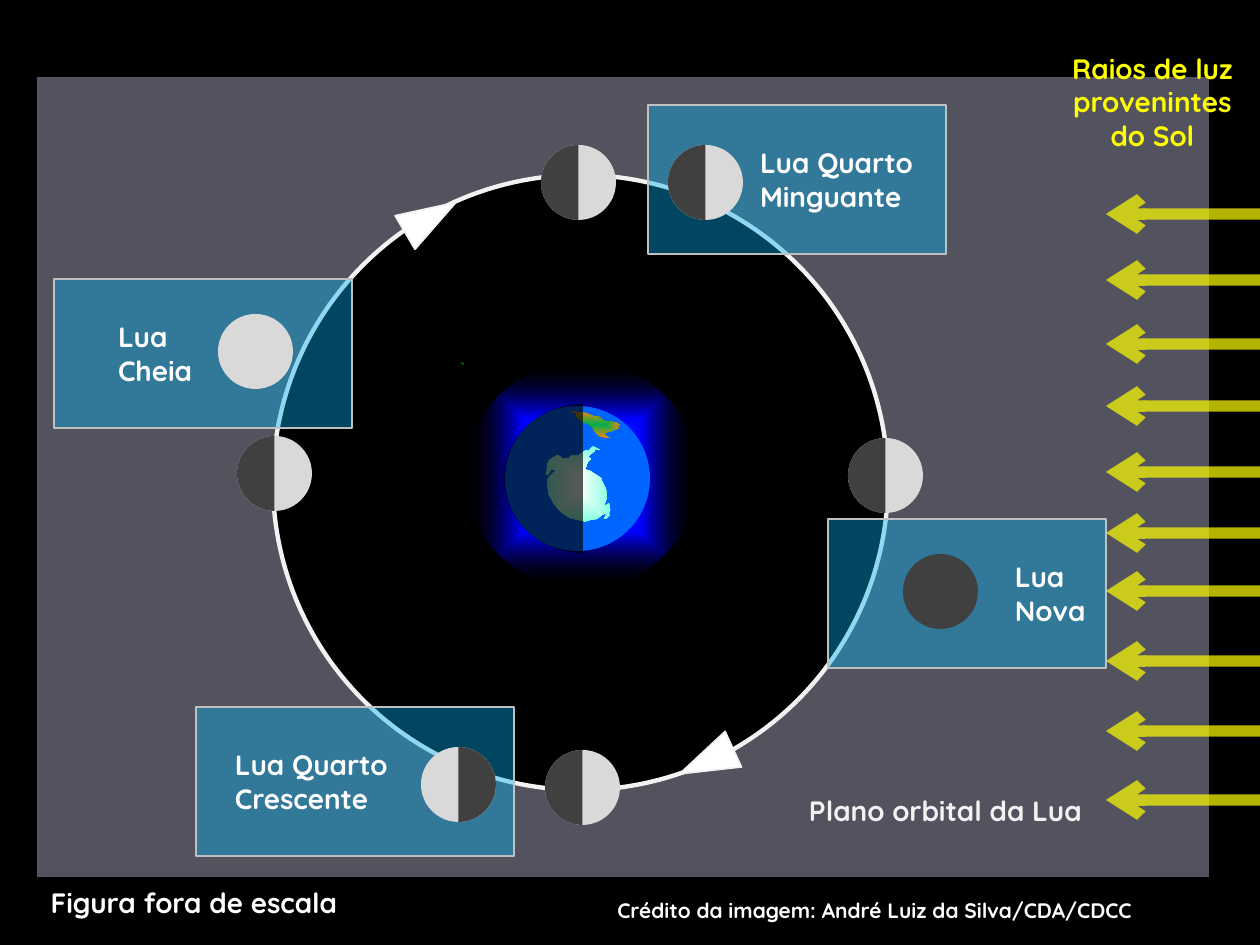
"""Build the slide on the phases of the Moon along its orbit."""
from dataclasses import dataclass

from lxml.etree import SubElement
from pptx import Presentation
from pptx.dml.color import RGBColor
from pptx.enum.shapes import MSO_CONNECTOR as Connector, MSO_SHAPE as Shape
from pptx.enum.text import MSO_ANCHOR as Anchor, PP_ALIGN as Align
from pptx.oxml import parse_xml
from pptx.oxml.ns import nsdecls, qn
from pptx.slide import Slide
from pptx.util import Pt

SCALE = 914400 / 126
COLORS = {
    "space": "000000", "plane": "D6D6F5", "orbit": "F2F2F2", "white": "FFFFFF",
    "sun": "FFFF00", "light": "D9D9D9", "dark": "404040", "label": "00B0F0",
    "border": "C0C0C0", "ocean": "0066FF", "glow": "0000FF", "forest": "00B050",
    "desert": "EE8800", "ice": "85FFE0", "islet": "008000",
}
MOON = 75
LEFT_HALF, RIGHT_HALF = (90, 270), (270, 90)
RAY_ROWS = (214, 280, 344, 406, 472, 533, 591, 661, 731, 800)
ORBIT_MOONS = ((237, 436), (545, 750), (848, 438), (541, 145))
PHASES = (
    ((648, 105, 298, 149), 112, ("Lua Quarto", "Minguante"), (668, 145), "light", LEFT_HALF),
    ((54, 279, 298, 149), 64, ("Lua", "Cheia"), (218, 314), "light", None),
    ((196, 707, 318, 149), 39, ("Lua Quarto", "Crescente"), (421, 747), "light", RIGHT_HALF),
    ((828, 519, 278, 149), 187, ("Lua", "Nova"), (903, 554), "dark", None),
)
ARROWHEADS = (((687, 732, 39, 59), 245.3), ((411, 188, 39, 59), 59.4))
CONTINENT = (
    (570, 411), (577, 413), (576, 417), (581, 421), (590, 425), (593, 428), (595, 432),
    (601, 437), (610, 438), (606, 436), (604, 433), (612, 431), (619, 428), (617, 427),
    (620, 425), (617, 423), (612, 422), (604, 421), (599, 417), (595, 417), (591, 415),
    (585, 413), (577, 412),
)
ANTARCTICA = (
    (591, 520), (597, 519), (602, 515), (607, 513), (604, 519), (607, 518), (610, 515),
    (609, 513), (611, 510), (609, 503), (604, 507), (605, 503), (607, 498), (606, 489),
    (602, 481), (601, 478), (590, 471), (586, 470), (585, 467), (587, 467), (586, 466),
    (588, 462), (591, 459), (588, 457), (591, 454), (595, 451), (595, 449), (600, 450),
    (593, 446), (590, 449), (590, 451), (586, 450), (578, 456), (571, 456), (568, 459),
    (563, 459), (558, 455), (549, 460), (547, 465), (546, 475), (548, 475), (551, 470),
    (556, 470), (553, 473), (548, 478), (547, 484), (549, 495), (554, 504), (561, 512),
    (570, 518), (578, 520), (585, 522),
)
ISLETS = (((462, 364), (464, 365), (463, 363)), ((461, 363), (464, 364), (462, 362)))


def px(*lengths):
    return [round(length * SCALE) for length in lengths]


def rgb(name):
    return RGBColor.from_string(COLORS[name])


@dataclass
class Painter:
    slide: Slide
    font: str = "Quicksand"

    def opacity(self, shape, percent):
        color = shape.element.spPr.find(".//" + qn("a:srgbClr"))
        SubElement(color, qn("a:alpha"), val=str(percent * 1000))

    def outline(self, shape, line, width):
        shape.shadow.inherit = False
        if line:
            shape.line.color.rgb = rgb(line)
            shape.line.width = Pt(width)
        else:
            shape.line.fill.background()

    def gradient(self, shape, stops):
        marks = "".join(
            f'<a:gs pos="{place * 1000}"><a:srgbClr val="{COLORS[name]}">'
            f'<a:alpha val="{alpha * 1000}"/></a:srgbClr></a:gs>'
            for place, name, alpha in stops)
        shape.element.spPr.insert(2, parse_xml(
            f'<a:gradFill {nsdecls("a")} rotWithShape="1"><a:gsLst>{marks}</a:gsLst>'
            '<a:path path="shape"><a:fillToRect l="50000" t="50000" r="50000" b="50000"/>'
            '</a:path></a:gradFill>'))

    def fill(self, shape, fill, opacity=100):
        if not isinstance(fill, str):
            self.gradient(shape, fill)
            return
        shape.fill.solid()
        shape.fill.fore_color.rgb = rgb(fill)
        if opacity < 100:
            self.opacity(shape, opacity)

    def shape(self, kind, box, fill, opacity=100, line=None, width=1, rotation=0):
        shape = self.slide.shapes.add_shape(kind, *px(*box))
        shape.rotation = rotation
        self.fill(shape, fill, opacity)
        self.outline(shape, line, width)
        return shape

    def half(self, box, angles, fill, opacity=100):
        shape = self.shape(Shape.CHORD, box, fill, opacity)
        for index, angle in enumerate(angles):
            shape.adjustments[index] = angle * 0.6

    def moon(self, corner, fill="light", shaded=LEFT_HALF):
        box = (*corner, MOON, MOON)
        self.shape(Shape.OVAL, box, fill)
        if shaded:
            self.half(box, shaded, "dark")

    def land(self, points, fill):
        builder = self.slide.shapes.build_freeform(*points[0], scale=SCALE)
        builder.add_line_segments(points[1:], close=True)
        shape = builder.convert_to_shape()
        self.fill(shape, fill)
        self.outline(shape, None, 0)

    def add_lines(self, frame, lines, color="white", size=16, align=Align.LEFT):
        for index, line in enumerate(lines):
            paragraph = frame.add_paragraph() if index else frame.paragraphs[0]
            paragraph.alignment = align
            run = paragraph.add_run()
            run.text = line
            run.font.name = self.font
            run.font.size = Pt(size)
            run.font.bold = True
            run.font.color.rgb = rgb(color)

    def text(self, box, lines, wrap=False, **style):
        frame = self.slide.shapes.add_textbox(*px(*box)).text_frame
        frame.word_wrap = wrap
        self.add_lines(frame, lines, **style)

    def phase(self, box, inset, lines, corner, fill, shaded):
        shape = self.shape(Shape.RECTANGLE, box, "label", 40, "border", 0.75)
        frame = shape.text_frame
        frame.margin_left = px(inset)[0]
        frame.vertical_anchor = Anchor.MIDDLE
        self.add_lines(frame, lines)
        self.moon(corner, fill, shaded)

    def ray(self, y):
        ray = self.slide.shapes.add_connector(Connector.STRAIGHT, *px(1270, y, 1106, y))
        ray.line.color.rgb = rgb("sun")
        ray.line.width = Pt(6.5)
        self.opacity(ray, 70)
        properties = ray.element.spPr
        SubElement(properties.find(qn("a:ln")), qn("a:tailEnd"), type="arrow")
        SubElement(properties, qn("a:effectLst"))


def main():
    presentation = Presentation()
    presentation.slide_width, presentation.slide_height = px(1260, 945)
    slide = presentation.slides.add_slide(presentation.slide_layouts[6])
    slide.background.fill.solid()
    slide.background.fill.fore_color.rgb = rgb("space")
    painter = Painter(slide)

    painter.shape(Shape.RECTANGLE, (36, 76, 1174, 802), "plane", 39, "space")
    painter.text((605, 891, 665, 38), ["Crédito da imagem: André Luiz da Silva/CDA/CDCC"],
                 wrap=True, size=12)
    painter.shape(Shape.OVAL, (273, 175, 615, 615), "space", line="orbit", width=2.5)
    painter.text((1055, 45, 195, 115), ["Raios de luz", "provenintes", "do Sol"],
                 color="sun", align=Align.CENTER)
    for y in RAY_ROWS:
        painter.ray(y)
    painter.text((796, 787, 299, 47), ["Plano orbital da Lua"],
                 color="orbit", align=Align.CENTER)
    for corner in ORBIT_MOONS:
        painter.moon(corner)
    for phase in PHASES:
        painter.phase(*phase)
    painter.text((35, 879, 318, 47), ["Figura fora de escala"], align=Align.CENTER)
    for box, rotation in ARROWHEADS:
        painter.shape(Shape.ISOSCELES_TRIANGLE, box, "white", line="orbit", rotation=rotation)

    painter.shape(Shape.OVAL, (466, 362, 231, 227),
                  ((0, "ocean", 100), (50, "glow", 100), (100, "space", 0)))
    painter.shape(Shape.OVAL, (505, 406, 145, 145), "ocean")
    painter.land(CONTINENT, ((0, "forest", 100), (100, "desert", 100)))
    painter.land(ANTARCTICA, ((3, "white", 100), (100, "ice", 100)))
    for points in ISLETS:
        painter.land(points, "islet")
    painter.half((504, 404, 158, 149), LEFT_HALF, "space", 65)
    presentation.save("out.pptx")


if __name__ == "__main__":
    main()
